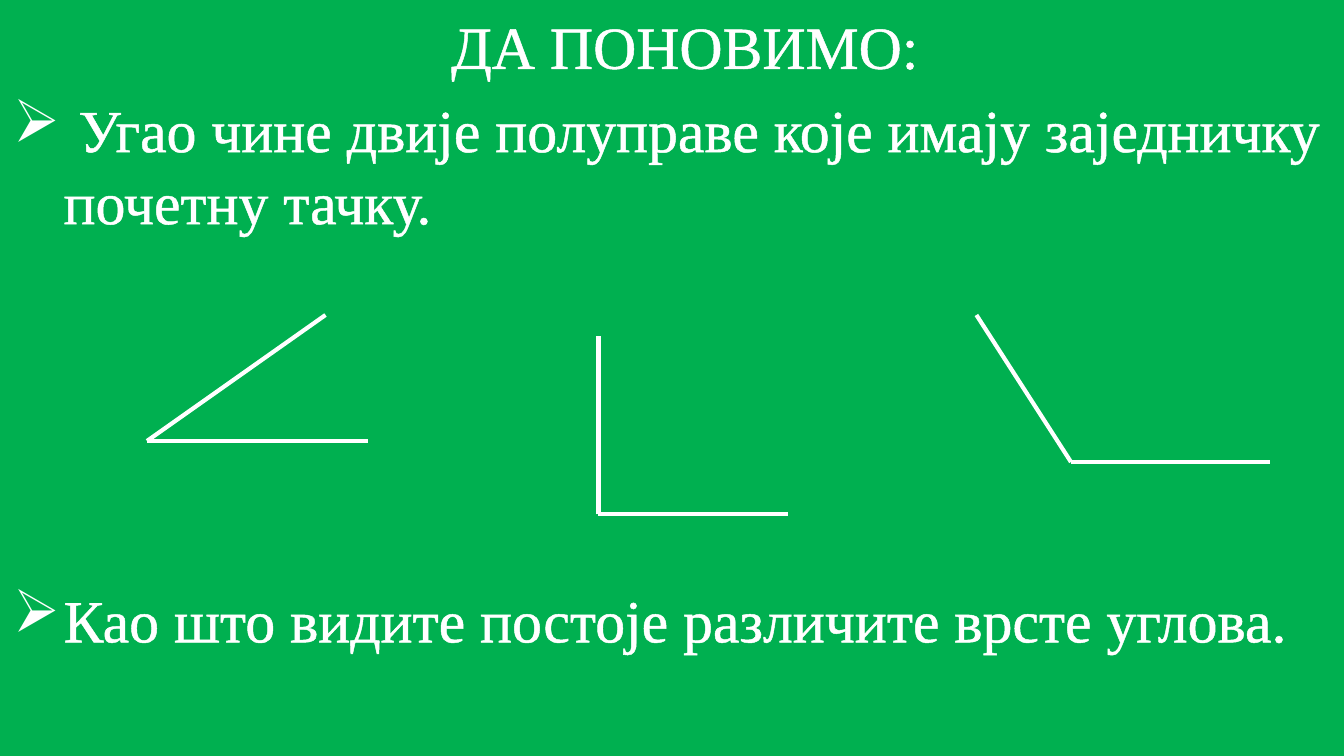
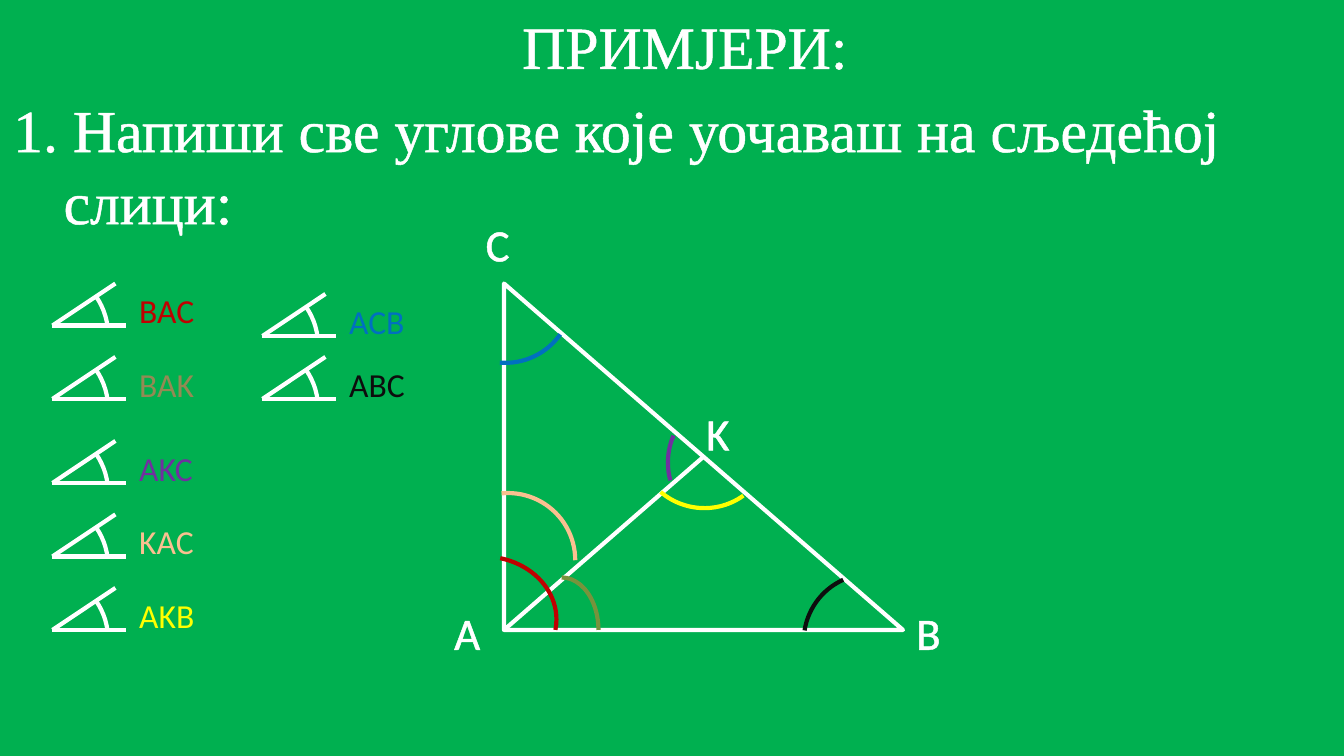
from lxml import etree
from pptx import Presentation
from pptx import util as u
from pptx.dml.color import RGBColor
from pptx.enum import shapes, text
from pptx.oxml import ns

WHITE = "FFFFFF"
GREEN = "00B050"
HANGING = 27
color = RGBColor.from_string


def write(paragraph, words, size=32, font="Times New Roman", fill=WHITE,
          outlined=True, align=text.PP_ALIGN.LEFT, margin=0, indent=0,
          bullet=None, before=0, line_height=None):
    """Fill one paragraph with text in the given format."""
    properties = paragraph._p.get_or_add_pPr()
    properties.set("marL", str(u.Pt(margin)))
    properties.set("indent", str(u.Pt(indent)))
    if bullet:
        etree.SubElement(properties, ns.qn("a:buChar")).set("char", bullet)
    else:
        etree.SubElement(properties, ns.qn("a:buNone"))
    paragraph.alignment = align
    if before:
        paragraph.space_before = u.Pt(before)
    if line_height:
        paragraph.line_spacing = u.Pt(line_height)
    run = paragraph.add_run()
    run.text = words
    run.font.size = u.Pt(size)
    run.font.name = font
    run.font.color.rgb = color(fill)
    if outlined:
        outline = etree.Element(ns.qn("a:ln"), w=str(u.Pt(1.45)))
        solid = etree.SubElement(outline, ns.qn("a:solidFill"))
        etree.SubElement(solid, ns.qn("a:srgbClr")).set("val", fill)
        run._r.get_or_add_rPr().insert(0, outline)


def stroke(shape, line_color=WHITE):
    """Give a connector or an unfilled shape its line, without a shadow."""
    shape.line.color.rgb = color(line_color)
    shape.line.width = u.Pt(2.25)
    etree.SubElement(shape._element.spPr, ns.qn("a:effectLst"))


presentation = Presentation()
presentation.slide_width = u.Pt(720)
presentation.slide_height = u.Pt(405)

# Titles and body paragraphs: words, bullet, space before
pages = [
    ("ДА ПОНОВИМО:", [
        (" Угао чине двије полуправе које имају заједничку почетну тачку.", "➢", 6),
        ("Као што видите постоје различите врсте углова.", "➢", 185.4)]),
    ("ПРИМЈЕРИ:", [
        ("1. Напиши све углове које уочаваш на сљедећој слици:", None, 6)]),
]

# Angles with plain rays: vertex and the two ray ends
lines = [[], []]
for vertex, ends in [
    ((78.75, 236.25), [(196.9, 236.25), (174.4, 168.75)]),
    ((320.6, 275.6), [(421.9, 275.6), (320.6, 180)]),
    ((573.75, 247.5), [(680.6, 247.5), (523.1, 168.75)]),
]:
    lines[0] += [(vertex, end) for end in ends]

# Triangle ABC with the segment AK: box, rotation, start, end, colour of each arc
lines[1].append(((270, 337.5), (376.9, 244.7)))
arcs = [
    ((219.4, 298.1, 78.75, 67.5), 0, 171.465, 4.97, "C00000"),
    ((281.25, 309.4, 39.4, 56.25), 0, 162, 0, "77933C"),
    ((341.3, 200.2, 72, 72), 137.4, 166.265, 211.898, "FFFF00"),
    ((430.6, 307.4, 72, 72), 264.3, 170.858, 204.785, "0D0D0D"),
    ((234.7, 122.4, 72, 72), 109.6, 171.391, 207.058, "0070C0"),
    ((357.8, 211.7, 72, 72), 228, 177.938, 201.275, "7030A0"),
    ((236.2, 264.2, 72, 72), 0, 158.683, 0, "FAC090"),
]
# Labels: words, left, top, width, size, colour, outlined
labels = [
    (letter, left, top, width, 24, WHITE, True)
    for letter, left, top, width in [
        ("A", 236.25, 320.6, 29), ("B", 483.75, 320.6, 34),
        ("C", 253.1, 112.5, 29), ("K", 371.25, 213.75, 28)]
]

# Legend: a small angle sign beside each angle name
for name, left, base, name_color in [
    ("BAC", 28.1, 174.4, "C00000"),
    ("BAK", 28.1, 213.75, "948A54"),
    ("AKC", 28.1, 258.75, "7030A0"),
    ("KAC", 28.1, 298.1, "FAC090"),
    ("AKB", 28.1, 337.5, "FFFF00"),
    ("ACB", 140.6, 180, "0070C0"),
    ("ABC", 140.6, 213.75, "0D0D0D"),
]:
    vertex = (left, base)
    lines[1] += [(vertex, (left + 39.4, base)), (vertex, (left + 33.75, base - 22.5))]
    arcs.append(((left - 42.2, base - 31, 72, 72), 34.2, 175.244, 191.608, WHITE))
    labels.append((name, left + 39.4, base - 22.5, 56, 18, name_color, False))

for (title, body), segments in zip(pages, lines):
    slide = presentation.slides.add_slide(presentation.slide_layouts[6])

    # Green board with its text
    board = slide.shapes.add_shape(
        shapes.MSO_SHAPE.RECTANGLE, 0, 0,
        presentation.slide_width, presentation.slide_height)
    board.shadow.inherit = False
    board.fill.solid()
    board.fill.fore_color.rgb = color(GREEN)
    board.line.fill.background()
    frame = board.text_frame
    frame.word_wrap = True
    frame.vertical_anchor = text.MSO_ANCHOR.TOP
    frame.margin_top = u.Pt(4.7)
    write(frame.paragraphs[0], title, align=text.PP_ALIGN.CENTER,
          margin=14, line_height=38.6)
    for words, bullet, before in body:
        write(frame.add_paragraph(), words, margin=HANGING, indent=-HANGING,
              bullet=bullet, before=before, line_height=38.6)

    # Rays and segments
    for start, end in segments:
        stroke(slide.shapes.add_connector(
            shapes.MSO_CONNECTOR.STRAIGHT, *map(u.Pt, start + end)))

# Triangle on the last slide
triangle = slide.shapes.add_shape(
    shapes.MSO_SHAPE.RIGHT_TRIANGLE, *map(u.Pt, (270, 151.9, 213.75, 185.6)))
triangle.fill.background()
stroke(triangle)

# Angle arcs
for box, rotation, start, end, arc_color in arcs:
    arc = slide.shapes.add_shape(shapes.MSO_SHAPE.ARC, *map(u.Pt, box))
    arc.rotation = rotation
    arc.adjustments[0] = start
    arc.adjustments[1] = end
    arc.fill.background()
    stroke(arc, arc_color)

# Vertex letters and angle names
for words, left, top, width, size, label_color, outlined in labels:
    label = slide.shapes.add_textbox(*map(u.Pt, (left, top, width, size * 1.5)))
    label.text_frame.word_wrap = True
    write(label.text_frame.paragraphs[0], words, size=size, font="Calibri",
          fill=label_color, outlined=outlined)

presentation.save("out.pptx")
